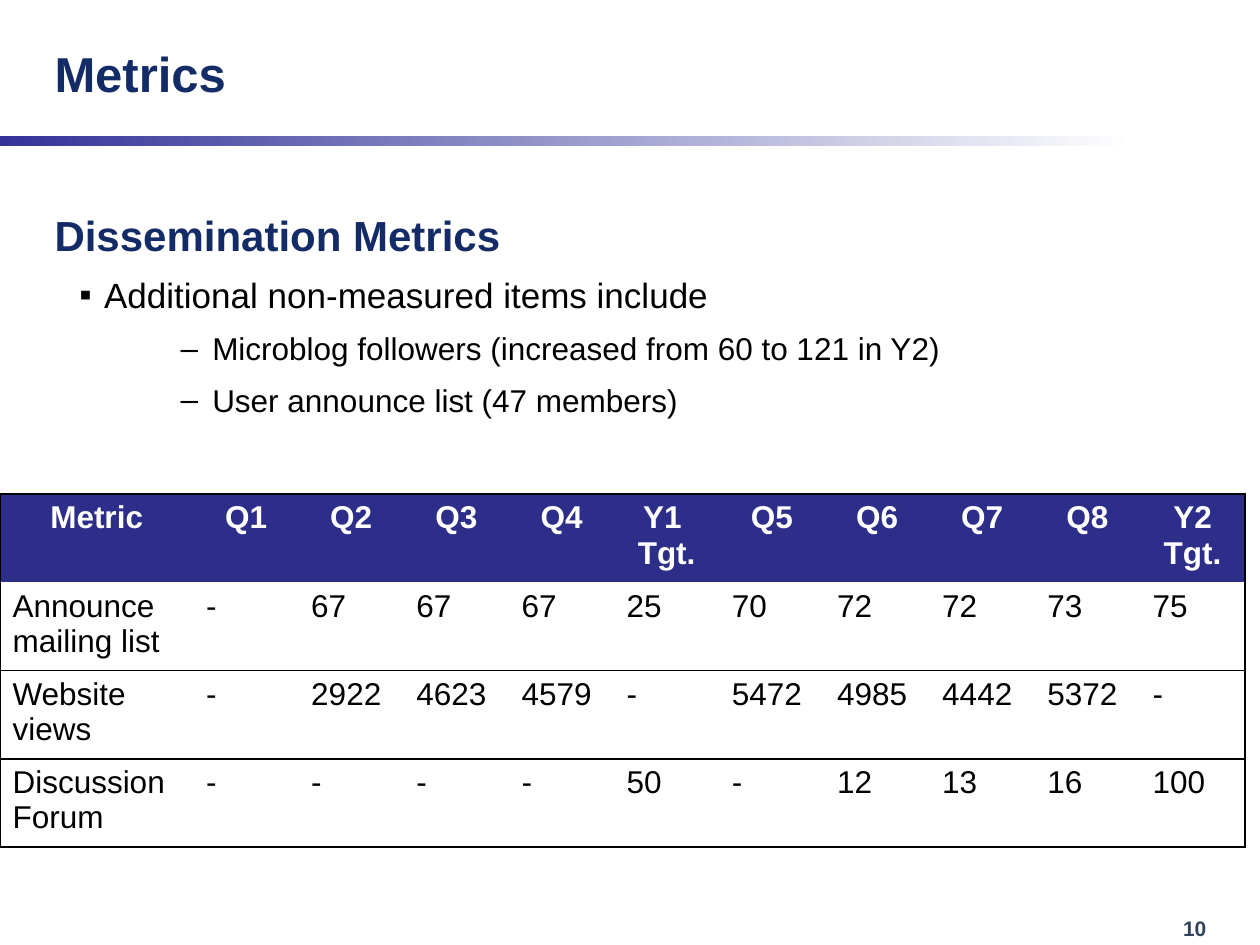
import pptx
import pptx.dml.color
import pptx.enum.shapes
import pptx.enum.text
import pptx.oxml.ns
import pptx.util
from lxml import etree

Cm = pptx.util.Cm
Pt = pptx.util.Pt
NAVY = pptx.dml.color.RGBColor(0x13, 0x2B, 0x66)
HEADER_BLUE = pptx.dml.color.RGBColor(0x2D, 0x2D, 0x8A)
BAR_BLUE = pptx.dml.color.RGBColor(0x33, 0x33, 0x99)
SLATE = pptx.dml.color.RGBColor(0x32, 0x42, 0x5D)
BLACK = pptx.dml.color.RGBColor(0, 0, 0)
WHITE = pptx.dml.color.RGBColor(255, 255, 255)

METRICS = [
    ["Metric", "Q1", "Q2", "Q3", "Q4", "Y1 \nTgt.", "Q5", "Q6", "Q7", "Q8", "Y2\nTgt."],
    ["Announce mailing list", "-", "67", "67", "67", "25", "70", "72", "72", "73", "75"],
    ["Website views", "-", "2922", "4623", "4579", "-", "5472", "4985", "4442", "5372", "-"],
    ["Discussion Forum", "-", "-", "-", "-", "50", "-", "12", "13", "16", "100"],
]


def add_child(parent, tag, **attributes):
    return etree.SubElement(parent, pptx.oxml.ns.qn(tag), attributes)


def style_font(paragraph, size, color, bold=False):
    paragraph.font.name = "Arial"
    paragraph.font.size = Pt(size)
    paragraph.font.bold = bold
    paragraph.font.color.rgb = color


def add_text_frame(slide, left, top, width, height):
    text_frame = slide.shapes.add_textbox(Cm(left), Cm(top), Cm(width), Cm(height)).text_frame
    text_frame.word_wrap = True
    return text_frame


def add_label(slide, text, box, size, color):
    """Add one bold line, centred vertically in its box."""
    text_frame = add_text_frame(slide, *box)
    text_frame.vertical_anchor = pptx.enum.text.MSO_ANCHOR.MIDDLE
    text_frame.text = text
    style_font(text_frame.paragraphs[0], size, color, bold=True)


def add_gradient_bar(slide):
    bar = slide.shapes.add_shape(
        pptx.enum.shapes.MSO_SHAPE.RECTANGLE, 0, Cm(2.74), Cm(25.4), Cm(0.21))
    bar.shadow.inherit = False
    bar.line.fill.background()
    bar.fill.gradient()
    bar.fill.gradient_angle = 0
    for stop, color, position in zip(bar.fill.gradient_stops, (BAR_BLUE, WHITE), (0, 0.9)):
        stop.color.rgb = color
        stop.position = position


def add_bullet(text_frame, text, symbol, margin, hanging, size):
    paragraph = text_frame.add_paragraph()
    paragraph.text = text
    paragraph.space_before = Pt(6)
    paragraph.line_spacing = 1.08
    properties = paragraph._p.get_or_add_pPr()
    properties.set("marL", str(Cm(margin)))
    properties.set("indent", str(-Cm(hanging)))
    add_child(properties, "a:buFont", typeface="Arial")
    add_child(properties, "a:buChar", char=symbol)
    style_font(paragraph, size, BLACK)


def add_dissemination_text(slide):
    text_frame = add_text_frame(slide, 0.85, 4.02, 23.7, 5.5)
    heading = text_frame.paragraphs[0]
    heading.text = "Dissemination Metrics"
    heading.line_spacing = 1.08
    style_font(heading, 24, NAVY, bold=True)
    add_bullet(text_frame, "Additional non-measured items include", "▪", 1, 0.5, 20)
    for text in ("Microblog followers (increased from 60 to 121 in Y2)",
                 "User announce list (47 members)"):
        add_bullet(text_frame, text, "–", 3.18, 0.64, 18)


def set_borders(cell, visible_sides):
    """Draw the given sides (letters of LRTB) in black and clear the others."""
    properties = cell._tc.get_or_add_tcPr()
    for side in "LRTB":
        line = add_child(properties, f"a:ln{side}", w=str(Pt(1)))
        if side in visible_sides:
            fill = add_child(line, "a:solidFill")
            add_child(fill, "a:srgbClr", val=str(BLACK))
        else:
            add_child(line, "a:noFill")


def add_metrics_table(slide):
    row_count, column_count = len(METRICS), len(METRICS[0])
    table = slide.shapes.add_table(
        row_count, column_count, 0, Cm(9.96), Cm(25.1), Cm(1.68 * row_count)).table
    table.horz_banding = False
    for index, column in enumerate(table.columns):
        column.width = Cm(2.12 if index else 3.9)
    for row_index, values in enumerate(METRICS):
        is_header = row_index == 0
        for column_index, value in enumerate(values):
            cell = table.cell(row_index, column_index)
            cell.text = value
            for paragraph in cell.text_frame.paragraphs:
                style_font(paragraph, 18, WHITE if is_header else BLACK, is_header)
                if is_header:
                    paragraph.alignment = pptx.enum.text.PP_ALIGN.CENTER
            sides = "T" if is_header else "B" if row_index == 1 else "TB"
            if column_index == 0:
                sides += "L"
            elif column_index == column_count - 1:
                sides += "R"
            set_borders(cell, sides)
            if is_header:
                cell.fill.solid()
                cell.fill.fore_color.rgb = HEADER_BLUE
            else:
                cell.fill.background()


def main():
    presentation = pptx.Presentation()
    presentation.slide_width = Cm(25.4)
    presentation.slide_height = Cm(19.05)
    slide = presentation.slides.add_slide(presentation.slide_layouts[6])
    add_label(slide, "10", (23.6, 18.34, 1.62, 0.76), 12, SLATE)
    add_gradient_bar(slide)
    add_label(slide, "Metrics", (0.85, 0.2, 18, 2.54), 28, NAVY)
    add_dissemination_text(slide)
    add_metrics_table(slide)
    presentation.save("out.pptx")


if __name__ == "__main__":
    main()
